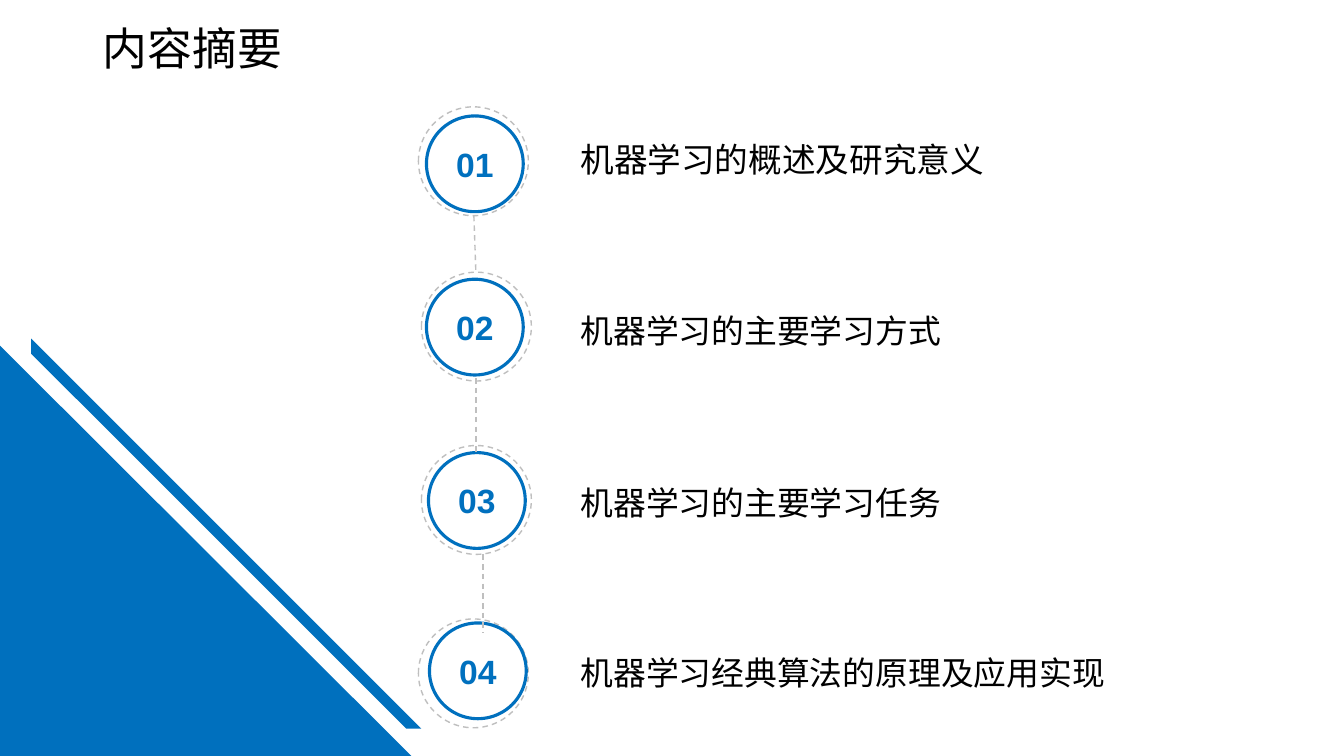
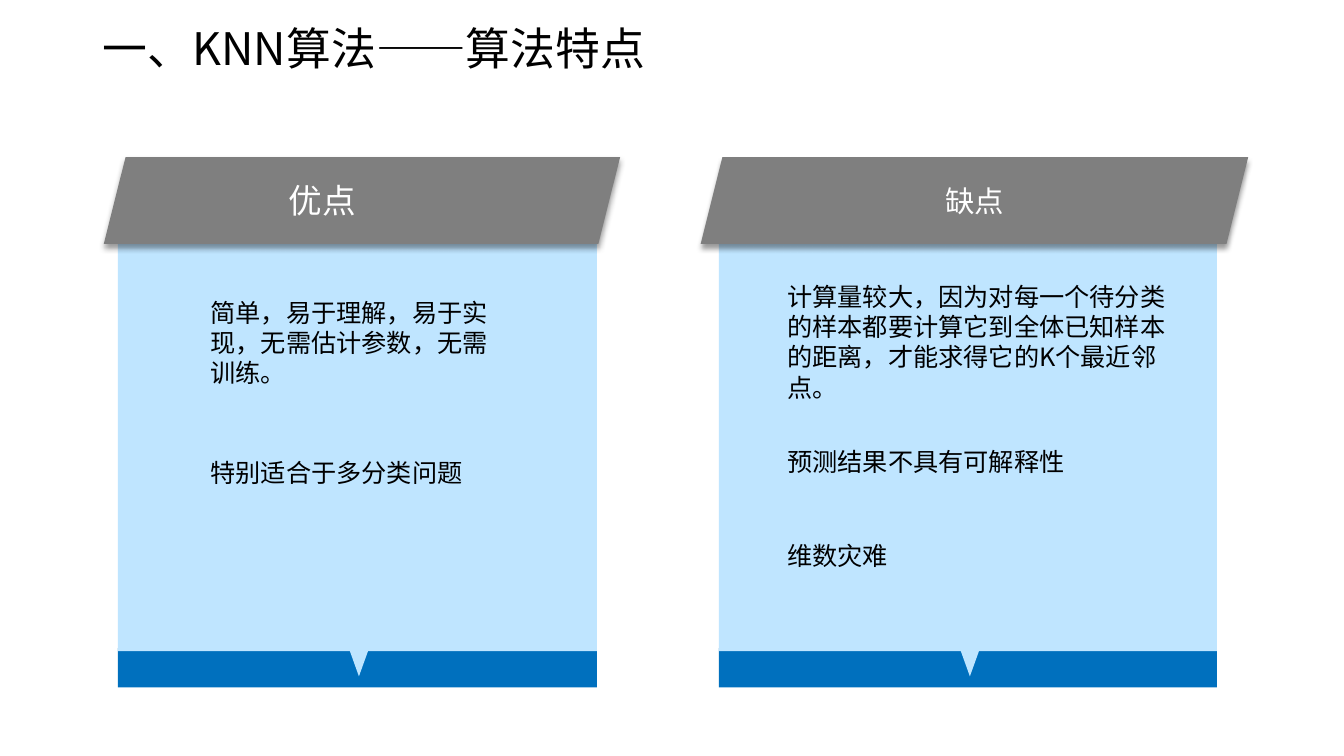
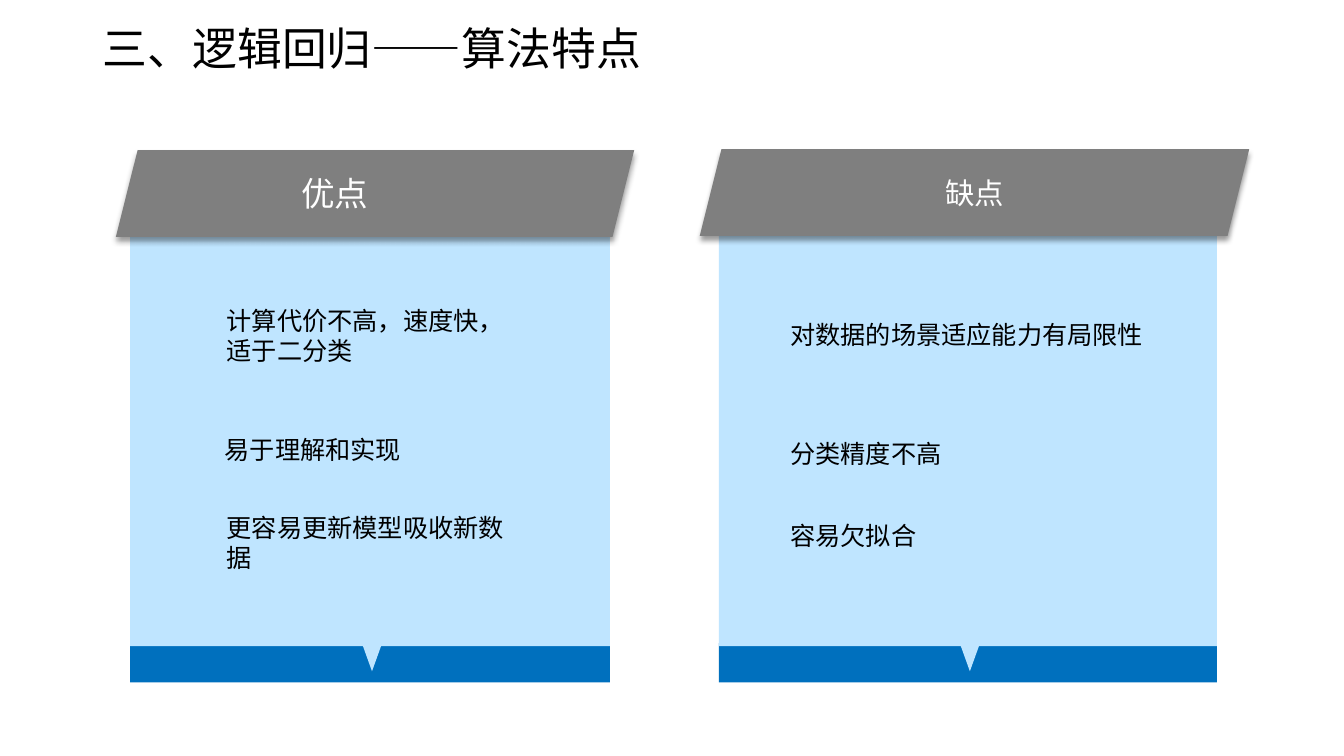
from dataclasses import dataclass

from lxml import etree
from pptx import Presentation
from pptx import util as u
from pptx.dml.color import RGBColor
from pptx.enum import dml, shapes, text
from pptx.oxml.ns import qn

PX = 9144
TOP, MIDDLE = text.MSO_ANCHOR.TOP, text.MSO_ANCHOR.MIDDLE
LEFT, CENTER = text.PP_ALIGN.LEFT, text.PP_ALIGN.CENTER


@dataclass(frozen=True)
class Theme:
    ink: str = "000000"
    paper: str = "FFFFFF"
    accent: str = "0070BE"
    pale: str = "BFE5FF"
    header: str = "7F7F7F"
    rule: str = "BFBFBF"
    cjk: str = "Noto Sans CJK SC"
    latin: str = "Arial"
    title: float = 32
    agenda: float = 23.4
    large: float = 24
    medium: float = 21
    body: float = 18


class Deck:
    def __init__(self, theme):
        self.theme = theme
        self.prs = Presentation()
        self.prs.slide_width = u.Emu(1333 * PX)
        self.prs.slide_height = u.Emu(750 * PX)
        self.s = None

    def box(self, x, y, w, h):
        return [u.Emu(v * PX) for v in (x, y, w, h)]

    def set_text(self, sp, words, size, color, font=None, bold=False,
                 align=LEFT, anchor=TOP, spacing=None):
        tf = sp.text_frame
        tf.text = words
        tf.word_wrap = True
        tf.auto_size = text.MSO_AUTO_SIZE.NONE
        tf.vertical_anchor = anchor
        p = tf.paragraphs[0]
        p.alignment = align
        if spacing:
            p.line_spacing = spacing
        r = p.runs[0]
        r.font.name = font or self.theme.cjk
        r.font.size = u.Pt(size)
        r.font.bold = bold
        r.font.color.rgb = RGBColor.from_string(color)
        etree.SubElement(r.font._element, qn("a:ea"), typeface=self.theme.cjk)
        return p

    def slide(self, title):
        self.s = self.prs.slides.add_slide(self.prs.slide_layouts[5])
        sp = self.s.shapes.title
        sp.left, sp.top, sp.width, sp.height = self.box(92, 0, 1150, 102)
        self.set_text(sp, title, self.theme.title, self.theme.ink,
                      anchor=MIDDLE, spacing=0.9)

    def label(self, words, x, y, w, h, size=None, anchor=TOP, spacing=None):
        sp = self.s.shapes.add_textbox(*self.box(x, y, w, h))
        self.set_text(sp, words, size or self.theme.body, self.theme.ink,
                      anchor=anchor, spacing=spacing)

    def fill(self, sp, color):
        sp.shadow.inherit = False
        sp.fill.solid()
        sp.fill.fore_color.rgb = RGBColor.from_string(color)
        sp.line.fill.background()

    def shape(self, kind, x, y, w, h, color):
        sp = self.s.shapes.add_shape(kind, *self.box(x, y, w, h))
        self.fill(sp, color)
        return sp

    def outline(self, color, *paths):
        builder = self.s.shapes.build_freeform(*paths[0][0], scale=PX)
        builder.add_line_segments(paths[0][1:])
        for corners in paths[1:]:
            builder.move_to(*corners[0])
            builder.add_line_segments(corners[1:])
        self.fill(builder.convert_to_shape(), color)

    def stroke(self, line, color, width, dashed):
        line.color.rgb = RGBColor.from_string(color)
        line.width = u.Pt(width)
        if dashed:
            line.dash_style = dml.MSO_LINE.DASH

    def circle(self, x, y, w, h, color, width, dashed=False):
        sp = self.s.shapes.add_shape(shapes.MSO_SHAPE.OVAL, *self.box(x, y, w, h))
        sp.shadow.inherit = False
        sp.fill.background()
        self.stroke(sp.line, color, width, dashed)
        return sp

    def badge(self, number, x, y, ring_x, ring_y):
        t = self.theme
        self.circle(ring_x, ring_y, 109, 108, t.rule, 1, dashed=True)
        sp = self.circle(x, y, 96, 95, t.accent, 2.25)
        self.set_text(sp, number, t.large, t.accent, t.latin, bold=True,
                      align=CENTER, anchor=MIDDLE)

    def link(self, x1, y1, x2, y2):
        line = self.s.shapes.add_connector(
            shapes.MSO_CONNECTOR.STRAIGHT, *self.box(x1, y1, x2, y2))
        self.stroke(line.line, self.theme.rule, 1, True)
        etree.SubElement(line._element.spPr, qn("a:effectLst"))

    def drop_shadow(self, sp):
        effects = sp._element.spPr.find(qn("a:effectLst"))
        shadow = etree.SubElement(
            effects, qn("a:outerShdw"), blurRad=str(u.Pt(4)),
            dist=str(u.Pt(3)), dir="5400000", algn="t", rotWithShape="0")
        color = etree.SubElement(shadow, qn("a:srgbClr"), val=self.theme.ink)
        etree.SubElement(color, qn("a:alpha"), val="40000")

    def panel(self, x, y, w, h, head_x, head_y, head_w):
        t = self.theme
        right, bottom, notch = x + w, y + h, x + w // 2 + 2
        self.shape(shapes.MSO_SHAPE.RECTANGLE, x, bottom - 3, w, 39, t.accent)
        self.outline(t.pale, [
            (x, y), (right, y), (right, bottom), (notch + 9, bottom),
            (notch, bottom + 25), (notch - 9, bottom), (x, bottom), (x, y)])
        head = self.shape(shapes.MSO_SHAPE.PARALLELOGRAM,
                          head_x, head_y, head_w, 86, t.header)
        self.drop_shadow(head)
        return head

    def pros(self, *place):
        t = self.theme
        p = self.set_text(self.panel(*place), "优点", t.large, t.paper,
                          anchor=MIDDLE)
        p._p.get_or_add_pPr().set("marL", str(122 * PX))

    def cons(self, *place):
        t = self.theme
        self.set_text(self.panel(*place), "缺点", t.medium, t.paper,
                      align=CENTER, anchor=MIDDLE)


def agenda(deck):
    t = deck.theme
    deck.slide("内容摘要")
    deck.outline(
        t.accent,
        [(0, 343), (408, 750), (0, 750), (0, 343)],
        [(31, 336), (418, 723), (403, 723), (31, 351), (31, 336)])
    topics = [
        ("机器学习的概述及研究意义", t.large, 121, (423, 115, 415, 106)),
        ("机器学习的主要学习方式", t.agenda, 292, (423, 277, 418, 270)),
        ("机器学习的主要学习任务", t.agenda, 462, (425, 449, 418, 442)),
        ("机器学习经典算法的原理及应用实现", t.agenda, 631, (426, 618, 415, 614)),
    ]
    for number, (words, size, y, place) in enumerate(topics, 1):
        deck.badge(f"{number:02}", *place)
        deck.label(words, 566, y, 560, 92, size, spacing=1.3)
    for ends in [(470, 214, 472, 270), (472, 375, 472, 452), (479, 550, 479, 628)]:
        deck.link(*ends)


def knn(deck):
    deck.slide("一、KNN算法——算法特点")
    deck.pros(117, 197, 475, 449, 103, 156, 512)
    deck.cons(713, 197, 494, 449, 695, 156, 543)
    for words, *place in [
        ("简单，易于理解，易于实现，无需估计参数，无需训练。", 199, 290, 310, 101),
        ("特别适合于多分类问题", 199, 449, 270, 40),
        ("计算量较大，因为对每一个待分类的样本都要计算它到全体已知样本的距离，"
         "才能求得它的K个最近邻点。", 771, 274, 403, 131),
        ("预测结果不具有可解释性", 771, 438, 335, 40),
        ("维数灾难", 771, 531, 329, 40),
    ]:
        deck.label(words, *place)


def logistic(deck):
    deck.slide("三、逻辑回归——算法特点")
    deck.pros(129, 190, 476, 451, 115, 149, 514)
    deck.cons(713, 190, 494, 451, 694, 148, 545)
    for words, *place in [
        ("计算代价不高，速度快，适于二分类", 215, 266, 305, 134),
        ("易于理解和实现", 213, 379, 305, 134),
        ("更容易更新模型吸收新数据", 215, 471, 305, 134),
        ("对数据的场景适应能力有局限性", 774, 277, 397, 110),
        ("分类精度不高", 774, 383, 370, 134),
        ("容易欠拟合", 774, 511, 147, 40),
    ]:
        deck.label(words, *place, anchor=MIDDLE)


def main():
    deck = Deck(Theme())
    for build in (agenda, knn, logistic):
        build(deck)
    deck.prs.save("out.pptx")


if __name__ == "__main__":
    main()
